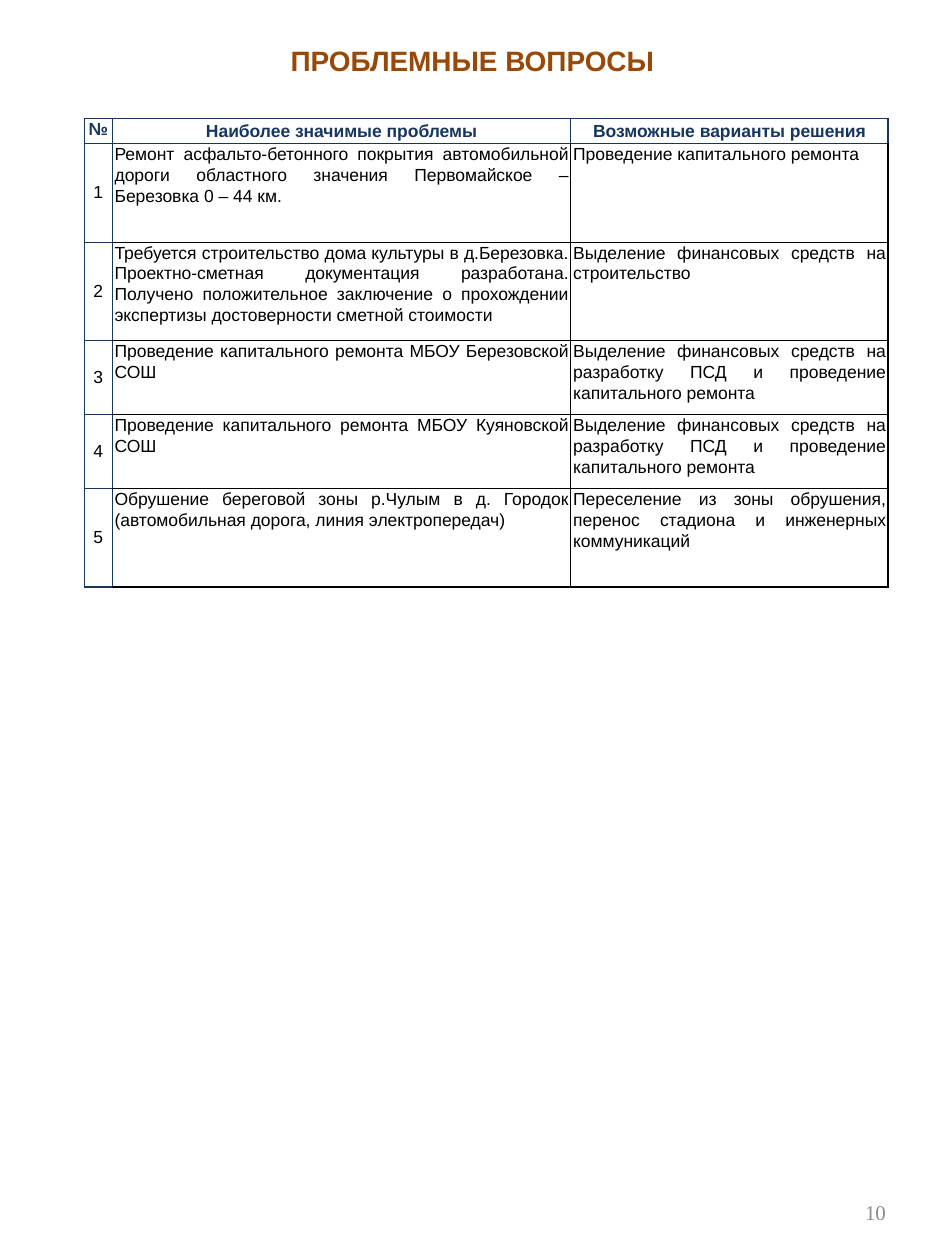
"""Build a slide with a table of problem issues and possible solutions."""
import pptx
import pptx.dml.color
import pptx.enum.text
import pptx.oxml.ns
import pptx.util
from lxml import etree

Inches, Pt = pptx.util.Inches, pptx.util.Pt
ALIGN = pptx.enum.text.PP_ALIGN
ANCHOR = pptx.enum.text.MSO_ANCHOR
qn = pptx.oxml.ns.qn

TITLE = "ПРОБЛЕМНЫЕ ВОПРОСЫ"
PAGE_NUMBER = "10"
HEADER = ("№", "Наиболее значимые проблемы", "Возможные варианты решения")
REPAIR = "Выделение финансовых средств на разработку ПСД и проведение капитального ремонта"
ISSUES = [
    ("Ремонт асфальто-бетонного покрытия автомобильной дороги областного "
     "значения Первомайское – Березовка 0 – 44 км.",
     "Проведение капитального ремонта"),
    ("Требуется строительство дома культуры в д.Березовка. Проектно-сметная "
     "документация разработана. Получено положительное заключение о прохождении "
     "экспертизы достоверности сметной стоимости",
     "Выделение финансовых средств на строительство"),
    ("Проведение капитального ремонта МБОУ Березовской СОШ", REPAIR),
    ("Проведение капитального ремонта МБОУ Куяновской СОШ", REPAIR),
    ("Обрушение береговой зоны р.Чулым в д. Городок (автомобильная дорога, "
     "линия электропередач)",
     "Переселение из зоны обрушения, перенос стадиона и инженерных коммуникаций"),
]
COL_WIDTHS = (0.22, 3.64, 2.52)
ROW_HEIGHTS = (0.2, 0.78, 0.78, 0.59, 0.59, 0.78)
COLORS = {"title": "984807", "navy": "17365D", "text": "000000", "number": "8C8C8C"}


def add_text(tf, text, size, color, align, font="Arial", bold=False):
    p = tf.paragraphs[0]
    p.alignment = align
    r = p.add_run()
    r.text = text
    r.font.size, r.font.name, r.font.bold = Pt(size), font, bold
    r.font.color.rgb = pptx.dml.color.RGBColor.from_string(COLORS[color])
    return p


def add_box(slide, place, anchor, *text_args, **text_kwargs):
    tf = slide.shapes.add_textbox(*map(Inches, place)).text_frame
    tf.word_wrap = True
    tf.vertical_anchor = anchor
    add_text(tf, *text_args, **text_kwargs)


def set_borders(cell, row, col):
    last_row, last_col = len(ROW_HEIGHTS) - 1, len(COL_WIDTHS) - 1
    navy = row == 0 or col == 0
    edges = {
        "lnL": (navy or col == 1, col == 0),
        "lnR": (navy, col == last_col),
        "lnT": (navy or row == 1, row <= 1),
        "lnB": (navy, row in (0, last_row)),
    }
    tc_pr = cell._tc.get_or_add_tcPr()
    for i, (tag, (is_navy, is_thick)) in enumerate(edges.items()):
        ln = etree.Element(qn("a:" + tag), w=str(Pt(1 if is_thick else 0.5)))
        fill = etree.SubElement(ln, qn("a:solidFill"))
        etree.SubElement(fill, qn("a:srgbClr"), val=COLORS["navy" if is_navy else "text"])
        tc_pr.insert(i, ln)


def fill_cell(cell, text, row, col):
    cell.margin_left = cell.margin_right = Inches(0.02)
    cell.margin_top = cell.margin_bottom = 0
    centred = row == 0 or col == 0
    middle = (row == 0) != (col == 0)
    cell.vertical_anchor = ANCHOR.MIDDLE if middle else ANCHOR.TOP
    p = add_text(cell.text_frame, text, 10, "text" if row else "navy",
                 ALIGN.CENTER if centred else ALIGN.JUSTIFY, bold=row == 0)
    if row == 0 or col > 0:
        p.line_spacing = 1.07
    cell.fill.background()
    set_borders(cell, row, col)


def main():
    prs = pptx.Presentation()
    prs.slide_width, prs.slide_height = Inches(7.5), Inches(10)
    slide = prs.slides.add_slide(prs.slide_layouts[6])

    add_box(slide, (0, 0.3, 7.5, 0.37), ANCHOR.TOP,
            TITLE, 16, "title", ALIGN.CENTER, bold=True)
    add_box(slide, (5.38, 9.1, 1.75, 0.67), ANCHOR.BOTTOM,
            PAGE_NUMBER, 12, "number", ALIGN.RIGHT, font="Times New Roman")

    rows = [HEADER] + [(str(n), *issue) for n, issue in enumerate(ISSUES, 1)]
    place = (0.67, 0.94, sum(COL_WIDTHS), sum(ROW_HEIGHTS))
    table = slide.shapes.add_table(len(rows), len(HEADER), *map(Inches, place)).table
    table.horz_banding = False
    for column, width in zip(table.columns, COL_WIDTHS):
        column.width = Inches(width)
    for row, texts in enumerate(rows):
        table.rows[row].height = Inches(ROW_HEIGHTS[row])
        for col, text in enumerate(texts):
            fill_cell(table.cell(row, col), text, row, col)

    prs.save("out.pptx")


if __name__ == "__main__":
    main()
